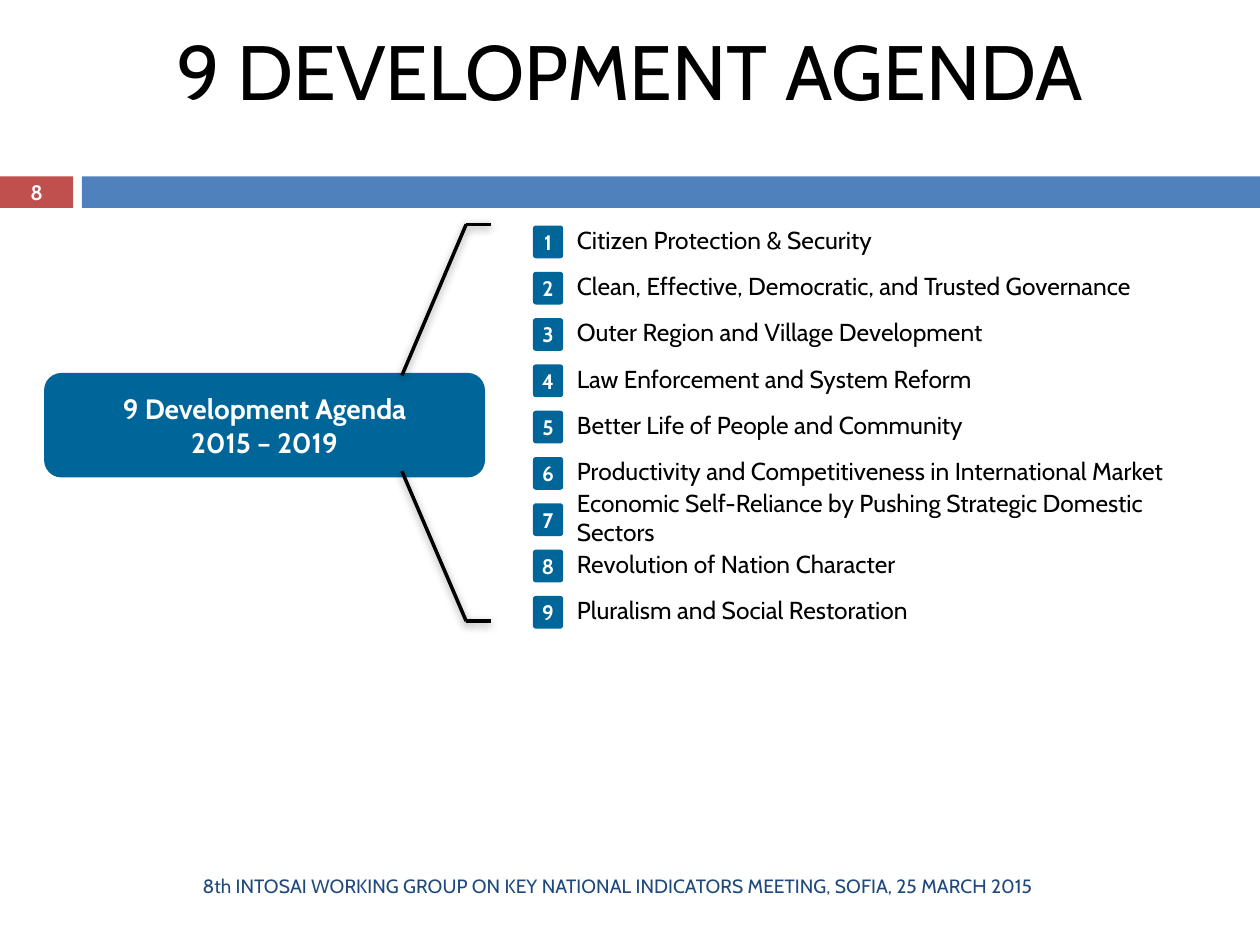
from lxml import etree
from pptx import Presentation
from pptx.dml.color import RGBColor
from pptx.enum.shapes import MSO_CONNECTOR, MSO_SHAPE
from pptx.enum.text import MSO_ANCHOR, PP_ALIGN
from pptx.oxml.ns import qn
from pptx.util import Inches, Pt

RECT = MSO_SHAPE.RECTANGLE
ROUNDED = MSO_SHAPE.ROUNDED_RECTANGLE
STRAIGHT = MSO_CONNECTOR.STRAIGHT
MIDDLE = MSO_ANCHOR.MIDDLE
LEFT = PP_ALIGN.LEFT
CENTER = PP_ALIGN.CENTER

FONT = "Cabin"
COLORS = {
    "red": "C0504D",
    "blue": "4F81BD",
    "teal": "006699",
    "navy": "1F497D",
    "black": "000000",
    "white": "FFFFFF",
}
AGENDA = [
    "Citizen Protection & Security",
    "Clean, Effective, Democratic, and Trusted Governance",
    "Outer Region and Village Development",
    "Law Enforcement and System Reform",
    "Better Life of People and Community",
    "Productivity and Competitiveness in International Market",
    "Economic Self-Reliance by Pushing Strategic Domestic Sectors",
    "Revolution of Nation Character",
    "Pluralism and Social Restoration",
]
ROW_PITCH = 0.3675


def rgb(color):
    return RGBColor.from_string(COLORS[color])


def write_text(shape, lines, size, color, align=CENTER, bold=False):
    frame = shape.text_frame
    frame.word_wrap = True
    frame.vertical_anchor = MIDDLE
    for index, line in enumerate(lines):
        paragraph = frame.add_paragraph() if index else frame.paragraphs[0]
        paragraph.alignment = align
        run = paragraph.add_run()
        run.text = line
        run.font.name = FONT
        run.font.size = Pt(size)
        run.font.bold = bold
        run.font.color.rgb = rgb(color)


def add_title(slide, text):
    title = slide.shapes.title
    title.left, title.top = Inches(0), Inches(0.16)
    title.width, title.height = Inches(10), Inches(0.78)
    write_text(title, [text], 44, "black")


def add_label(slide, box, text, size, color, align=CENTER, bold=False):
    label = slide.shapes.add_textbox(*map(Inches, box))
    write_text(label, [text], size, color, align, bold)


def add_block(slide, kind, box, color):
    block = slide.shapes.add_shape(kind, *map(Inches, box))
    block.shadow.inherit = False
    block.fill.solid()
    block.fill.fore_color.rgb = rgb(color)
    block.line.fill.background()
    return block


def add_agenda_row(slide, index, text):
    offset = index * ROW_PITCH
    badge = add_block(slide, ROUNDED, (4.23, 1.79 + offset, 0.24, 0.26), "teal")
    badge.adjustments[0] = 0.1
    frame = badge.text_frame
    frame.margin_left = frame.margin_right = 0
    frame.margin_top = frame.margin_bottom = 0
    write_text(badge, [str(index + 1)], 12, "white", bold=True)
    add_label(slide, (4.48, 1.73 + offset, 5.09, 0.34), text, 14, "black", LEFT)


def add_bracket_line(slide, start, end):
    line = slide.shapes.add_connector(STRAIGHT, *map(Inches, start + end))
    line.line.color.rgb = rgb("black")
    line.line.width = Pt(2)
    effects = etree.SubElement(line._element.spPr, qn("a:effectLst"))
    shadow = etree.SubElement(
        effects, qn("a:outerShdw"), blurRad=str(Pt(5)), dist=str(Pt(1.6)),
        dir="5400000", rotWithShape="0")
    tint = etree.SubElement(shadow, qn("a:srgbClr"), val=COLORS["black"])
    etree.SubElement(tint, qn("a:alpha"), val="38000")


def add_bracket(slide):
    for inner_y, outer_y in ((2.98, 1.78), (3.74, 4.93)):
        corner = (3.7, outer_y)
        add_bracket_line(slide, corner, (3.19, inner_y))
        add_bracket_line(slide, corner, (3.9, outer_y))


def main():
    deck = Presentation()
    deck.slide_width, deck.slide_height = Inches(10), Inches(7.5)
    slide = deck.slides.add_slide(deck.slide_layouts[5])

    add_block(slide, RECT, (0, 1.4, 0.58, 0.25), "red")
    add_block(slide, RECT, (0.65, 1.4, 9.35, 0.25), "blue")
    add_title(slide, "9 DEVELOPMENT AGENDA")
    for index, text in enumerate(AGENDA):
        add_agenda_row(slide, index, text)

    theme = add_block(slide, ROUNDED, (0.35, 2.96, 3.5, 0.83), "teal")
    write_text(theme, ["9 Development Agenda", "2015 – 2019"], 16, "white", bold=True)
    add_bracket(slide)

    add_label(
        slide, (0.67, 6.83, 8.47, 0.4),
        "8th INTOSAI WORKING GROUP ON KEY NATIONAL INDICATORS MEETING, "
        "SOFIA, 25 MARCH 2015", 11, "navy")
    add_label(slide, (0, 1.39, 0.58, 0.27), "8", 11.9, "white", bold=True)
    deck.save("out.pptx")


if __name__ == "__main__":
    main()
